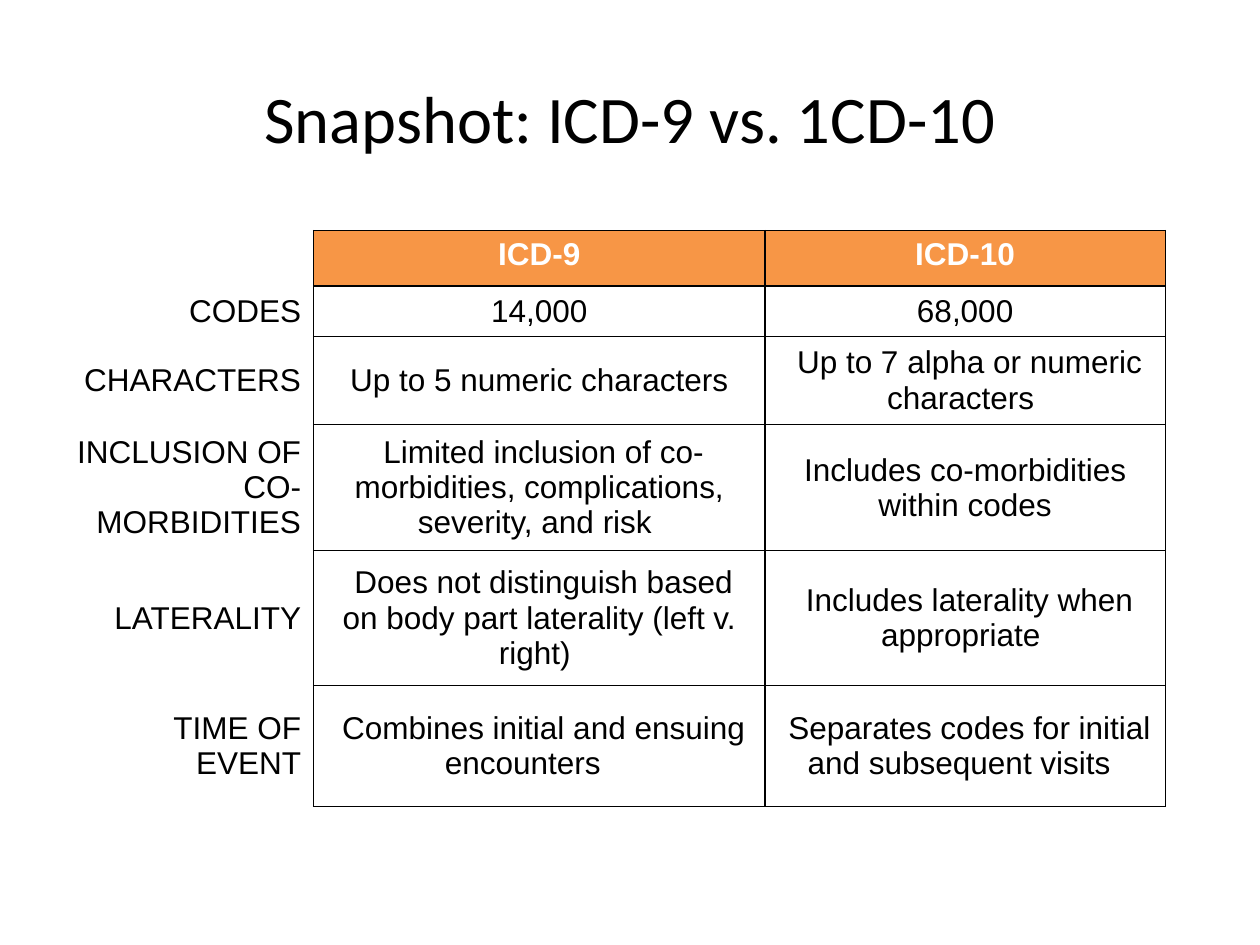
from dataclasses import dataclass

from lxml import etree
from pptx import Presentation
from pptx.dml.color import RGBColor
from pptx.enum.text import MSO_ANCHOR, PP_ALIGN
from pptx.oxml.ns import qn
from pptx.util import Inches, Pt

TOP, MIDDLE = MSO_ANCHOR.TOP, MSO_ANCHOR.MIDDLE
CENTER, RIGHT = PP_ALIGN.CENTER, PP_ALIGN.RIGHT
BLANK_LAYOUT = 6


@dataclass(frozen=True)
class Theme:
    ink: str = "000000"
    header_ink: str = "FFFFFF"
    header_fill: str = "F79646"
    title_font: str = "Calibri"
    table_font: str = "Arial"
    title_size: float = 38
    table_size: float = 18
    border_width: float = 1


THEME = Theme()
SLIDE_WIDTH, SLIDE_HEIGHT = Inches(10), Inches(7.5)
LEFT_MARGIN = 0.05  # share of the slide width
COLUMN_WIDTHS = (1.99, 3.58, 3.18)
ROW_HEIGHTS = (0.44, 0.4, 0.67, 0.94, 1.07, 0.96)

COMPARISON = (
    ("", "ICD-9", "ICD-10"),
    ("CODES", "14,000", "68,000"),
    ("CHARACTERS", " Up to 5 numeric characters ",
     " Up to 7 alpha or numeric characters "),
    ("INCLUSION OF CO-MORBIDITIES",
     " Limited inclusion of co-morbidities, complications, severity, and risk ",
     "Includes co-morbidities within codes"),
    ("LATERALITY",
     " Does not distinguish based on body part laterality (left v. right) ",
     " Includes laterality when appropriate "),
    ("TIME OF EVENT", " Combines initial and ensuing encounters \t",
     " Separates codes for initial and subsequent visits \t"),
)

LABEL_FORMAT = {"name": THEME.table_font, "size": Pt(THEME.table_size), "bold": False}
HEADER_FORMAT = {**LABEL_FORMAT, "bold": True}
TITLE_FORMAT = {"name": THEME.title_font, "size": Pt(THEME.title_size)}


def write_text(frame, text, font_format, color, align):
    paragraph = frame.paragraphs[0]
    paragraph.alignment = align
    run = paragraph.add_run()
    run.text = text
    for attribute, value in font_format.items():
        setattr(run.font, attribute, value)
    run.font.color.rgb = RGBColor.from_string(color)


def set_borders(cell, visible_edges):
    properties = cell._tc.get_or_add_tcPr()
    # Border lines come before the fill in the cell properties
    for position, edge in enumerate("LRTB"):
        line = etree.Element(qn(f"a:ln{edge}"), w=str(Pt(THEME.border_width)))
        if edge in visible_edges:
            fill = etree.SubElement(line, qn("a:solidFill"))
            etree.SubElement(fill, qn("a:srgbClr"), val=THEME.ink)
        else:
            etree.SubElement(line, qn("a:noFill"))
        properties.insert(position, line)


def add_title(slide, text):
    title = slide.shapes.add_textbox(
        int(SLIDE_WIDTH * LEFT_MARGIN), int(SLIDE_HEIGHT * 0.04),
        int(SLIDE_WIDTH * 0.9), int(SLIDE_HEIGHT / 6))
    frame = title.text_frame
    frame.word_wrap = True
    frame.vertical_anchor = MIDDLE
    write_text(frame, text, TITLE_FORMAT, THEME.ink, CENTER)


def fill_cell(cell, text, is_header, is_label):
    cell.vertical_anchor = TOP if is_header else MIDDLE
    if is_header and not is_label:
        cell.fill.solid()
        cell.fill.fore_color.rgb = RGBColor.from_string(THEME.header_fill)
    else:
        cell.fill.background()
    if text:
        write_text(cell.text_frame, text,
                   HEADER_FORMAT if is_header else LABEL_FORMAT,
                   THEME.header_ink if is_header else THEME.ink,
                   RIGHT if is_label else CENTER)
    set_borders(cell, "R" if is_label else "LRTB")


def add_comparison(slide):
    table = slide.shapes.add_table(
        len(ROW_HEIGHTS), len(COLUMN_WIDTHS),
        int(SLIDE_WIDTH * LEFT_MARGIN), Inches(1.83),
        Inches(sum(COLUMN_WIDTHS)), Inches(sum(ROW_HEIGHTS))).table
    table.first_row = table.horz_banding = False
    for column, width in zip(table.columns, COLUMN_WIDTHS):
        column.width = Inches(width)
    for row, height in zip(table.rows, ROW_HEIGHTS):
        row.height = Inches(height)
    for r, texts in enumerate(COMPARISON):
        for c, text in enumerate(texts):
            fill_cell(table.cell(r, c), text, is_header=r == 0, is_label=c == 0)


def main():
    deck = Presentation()
    deck.slide_width, deck.slide_height = SLIDE_WIDTH, SLIDE_HEIGHT
    slide = deck.slides.add_slide(deck.slide_layouts[BLANK_LAYOUT])
    add_title(slide, "Snapshot: ICD-9 vs. 1CD-10")
    add_comparison(slide)
    deck.save("out.pptx")


if __name__ == "__main__":
    main()
